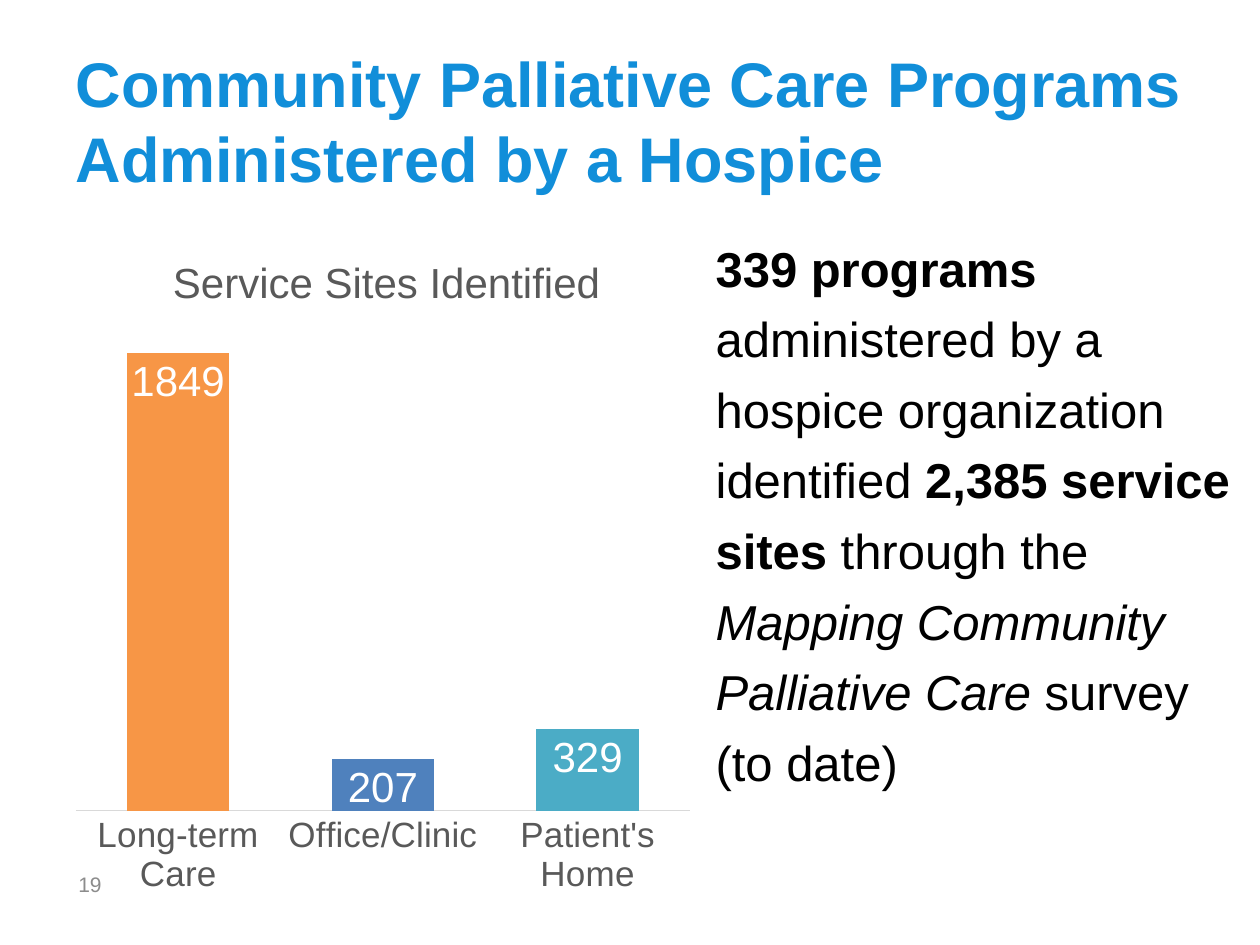
from dataclasses import dataclass

from lxml import etree
from pptx import Presentation
from pptx.chart.data import CategoryChartData
from pptx.dml.color import RGBColor
from pptx.enum.chart import XL_CHART_TYPE, XL_LABEL_POSITION, XL_TICK_MARK
from pptx.enum.text import MSO_ANCHOR, MSO_AUTO_SIZE, PP_ALIGN
from pptx.oxml import parse_xml
from pptx.oxml.ns import nsdecls, qn
from pptx.util import Pt

COLUMN = XL_CHART_TYPE.COLUMN_CLUSTERED
INSIDE_END = XL_LABEL_POSITION.INSIDE_END
NO_TICK = XL_TICK_MARK.NONE
TOP, MIDDLE = MSO_ANCHOR.TOP, MSO_ANCHOR.MIDDLE
NO_FIT = MSO_AUTO_SIZE.NONE
LEFT = PP_ALIGN.LEFT
EMU_PER_PX = 914400 / 126


@dataclass(frozen=True)
class Theme:
    font: str = "Arial"
    title: str = "118ED9"
    text: str = "000000"
    muted: str = "8C8C8C"
    chart_text: str = "595959"
    axis: str = "D9D9D9"
    label: str = "FFFFFF"
    bars: tuple = ("F79646", "4F81BD", "4BACC6")
    title_size: int = 36
    body_size: int = 28
    chart_size: int = 24
    axis_size: int = 20
    number_size: int = 12


THEME = Theme()


def px(n):
    return round(n * EMU_PER_PX)


def rgb(value):
    return RGBColor.from_string(value)


def style(font, size, color, **formats):
    values = {"name": THEME.font, "size": Pt(size), "bold": False, **formats}
    for name, value in values.items():
        setattr(font, name, value)
    font.color.rgb = rgb(color)


def place(sp, box):
    for name, value in zip(("left", "top", "width", "height"), box):
        setattr(sp, name, px(value))


def write(sp, runs, size, color, anchor=TOP):
    """Fill a shape with one left-aligned paragraph of (text, formats) runs."""
    tf = sp.text_frame
    formats = {"word_wrap": True, "auto_size": NO_FIT, "vertical_anchor": anchor}
    for name, value in formats.items():
        setattr(tf, name, value)
    p = tf.paragraphs[0]
    p.alignment = LEFT
    for text, run_formats in runs:
        r = p.add_run()
        r.text = text
        style(r.font, size, color, **run_formats)
    return p


def remove_bullet(p):
    pPr = p._p.get_or_add_pPr()
    pPr.set("marL", "0")
    pPr.set("indent", "0")
    etree.SubElement(pPr, qn("a:buNone"))


def set_layout(element, inner=False, **fractions):
    """Put a chart part at fractions of the chart's size."""
    old = element.find(qn("c:layout"))
    if old is not None:
        element.remove(old)
    target = '<c:layoutTarget val="inner"/>' if inner else ""
    modes = '<c:xMode val="edge"/><c:yMode val="edge"/>'
    sizes = "".join(f'<c:{k} val="{v}"/>' for k, v in fractions.items())
    layout = parse_xml(
        f'<c:layout {nsdecls("c")}><c:manualLayout>{target}{modes}{sizes}'
        "</c:manualLayout></c:layout>"
    )
    element.insert(0 if inner else 1, layout)


def add_sites_chart(slide, box, title, sites):
    data = CategoryChartData()
    data.categories = list(sites)
    data.add_series("Series 1", list(sites.values()))
    chart = slide.shapes.add_chart(COLUMN, *map(px, box), data).chart
    style(chart.font, 10, THEME.text)
    chart.has_legend = False

    p = chart.chart_title.text_frame.paragraphs[0]
    r = p.add_run()
    r.text = title
    style(r.font, THEME.chart_size, THEME.chart_text)
    chart.chart_title.include_in_layout = False
    set_layout(chart.chart_title._element, x=0.16, y=0.04)
    set_layout(chart._chartSpace.chart.plotArea, True, x=0.02, y=0.14, w=0.96, h=0.72)

    axis = chart.category_axis
    axis.major_tick_mark = NO_TICK
    axis.format.line.color.rgb = rgb(THEME.axis)
    axis.format.line.width = Pt(0.75)
    style(axis.tick_labels.font, THEME.axis_size, THEME.chart_text)
    scale = {"visible": False, "has_major_gridlines": False,
             "minimum_scale": 0, "maximum_scale": 2000}
    for name, value in scale.items():
        setattr(chart.value_axis, name, value)

    plot = chart.plots[0]
    plot.gap_width = 100
    plot.vary_by_categories = False
    series = plot.series[0]
    for i, color in enumerate(THEME.bars):
        fill = series.points[i].format.fill
        fill.solid()
        fill.fore_color.rgb = rgb(color)
    labels = series.data_labels
    labels.show_value = True
    labels.position = INSIDE_END
    style(labels.font, THEME.chart_size, THEME.label)


def add_title(slide, text, box):
    sp = slide.shapes.title
    place(sp, box)
    write(sp, [(text, {"bold": True})], THEME.title_size, THEME.title)


def add_body(slide, runs, box):
    sp = slide.placeholders[1]
    place(sp, box)
    p = write(sp, runs, THEME.body_size, THEME.text)
    p.line_spacing = 1.2
    p.space_before = Pt(0)
    remove_bullet(p)


def add_page_number(slide, number, box):
    sp = slide.shapes.add_textbox(*map(px, box))
    write(sp, [(number, {})], THEME.number_size, THEME.muted, MIDDLE)


def main():
    prs = Presentation()
    prs.slide_width, prs.slide_height = px(1260), px(945)
    slide = prs.slides.add_slide(prs.slide_layouts[1])
    add_title(slide, "Community Palliative Care Programs Administered by a Hospice",
              (63, 38, 1134, 277))
    add_sites_chart(slide, (63, 220, 640, 687), "Service Sites Identified",
                    {"Long-term Care": 1849, "Office/Clinic": 207, "Patient's Home": 329})
    add_body(slide, [
        ("339 programs ", {"bold": True}),
        ("administered by a hospice organization identified ", {}),
        ("2,385 service sites", {"bold": True}),
        (" through the ", {}),
        ("Mapping Community Palliative Care ", {"italic": True}),
        ("survey (to date)", {}),
    ], (703, 220, 557, 624))
    add_page_number(slide, "19", (66, 858, 66, 53))
    prs.save("out.pptx")


if __name__ == "__main__":
    main()
